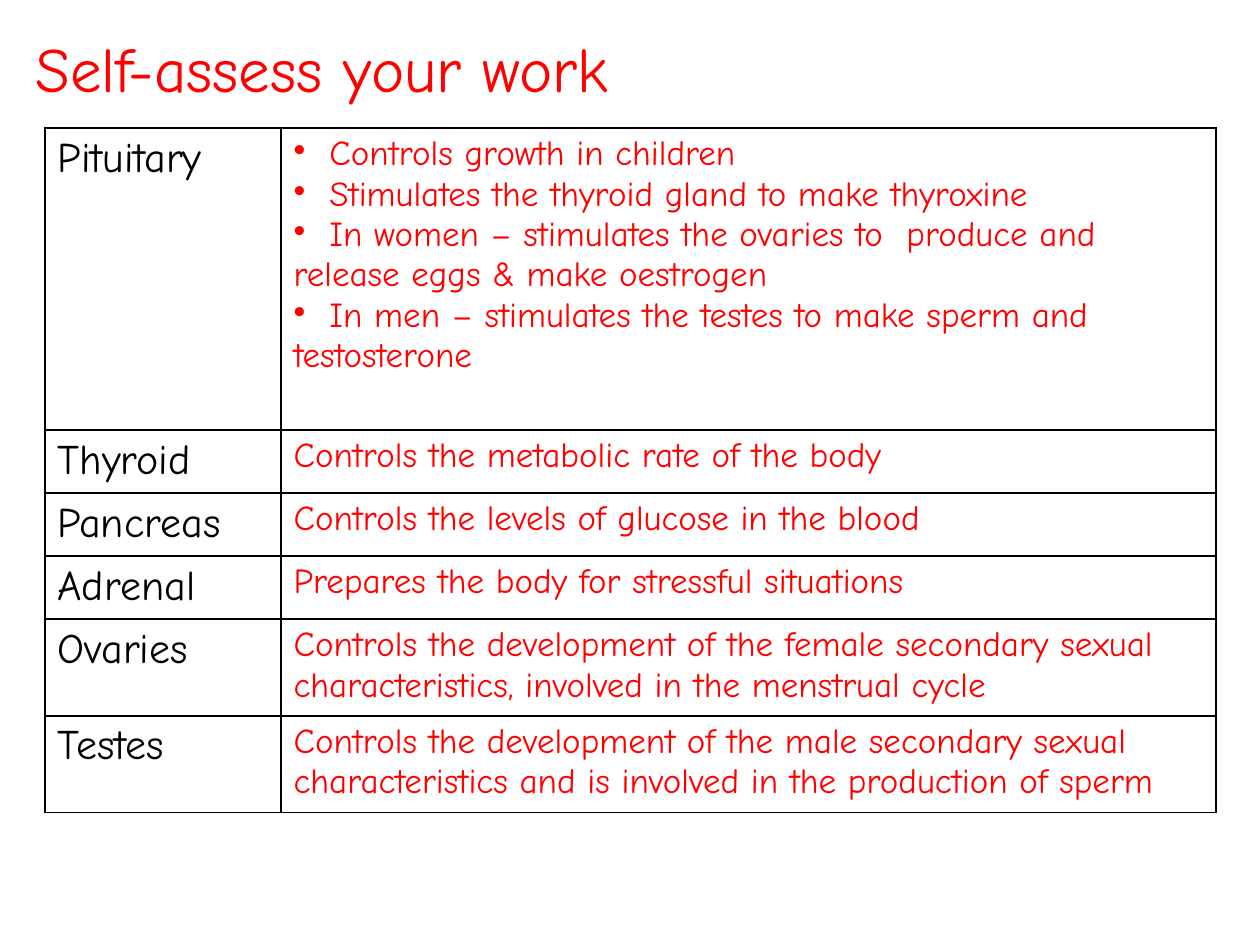
from typing import NamedTuple

from lxml import etree
from pptx import Presentation
from pptx.dml.color import RGBColor
from pptx.enum.text import MSO_ANCHOR
from pptx.oxml.ns import qn
from pptx.util import Emu, Pt

TOP = MSO_ANCHOR.TOP
PX = 914400 // 126
FONT = "Comic Neue"
COLORS = {"answer": "FF0000", "gland": "000000", "border": "000000", "paper": "FFFFFF"}


class GlandRow(NamedTuple):
    gland: str
    answers: list[str]
    height: int
    bulleted: bool = False


ROWS = [
    GlandRow("Pituitary", [
        "  Controls growth in children",
        "  Stimulates the thyroid gland to make thyroxine",
        "  In women – stimulates the ovaries to  produce and release eggs & make oestrogen",
        "  In men – stimulates the testes to make sperm and testosterone",
    ], 302, True),
    GlandRow("Thyroid", ["Controls the metabolic rate of the body"], 63),
    GlandRow("Pancreas", ["Controls the levels of glucose in the blood"], 62),
    GlandRow("Adrenal", ["Prepares the body for stressful situations"], 61),
    GlandRow("Ovaries", ["Controls the development of the female secondary sexual "
                         "characteristics, involved in the menstrual cycle"], 93),
    GlandRow("Testes", ["Controls the development of the male secondary sexual "
                        "characteristics and is involved in the production of sperm"], 93),
]
COLUMN_WIDTHS = [236, 935]


def px(length: int) -> Emu:
    return Emu(length * PX)


def write(frame, lines: list[str], *, size: int, color: str,
          bulleted: bool = False, line_spacing: float = 1.0) -> None:
    """Fill a text frame with one paragraph per line."""
    frame.word_wrap = True
    for index, line in enumerate(lines):
        para = frame.paragraphs[0] if index == 0 else frame.add_paragraph()
        para.line_spacing = line_spacing
        span = para.add_run()
        span.text = line
        span.font.name = FONT
        span.font.size = Pt(size)
        span.font.color.rgb = RGBColor.from_string(COLORS[color])
        if bulleted:
            properties = para._p.get_or_add_pPr()
            properties.set("marL", "0")
            properties.set("indent", "0")
            etree.SubElement(properties, qn("a:buChar"), char="•")


def style_cell(cell) -> None:
    """Give a cell a plain fill and a thin border on every side."""
    cell.vertical_anchor = TOP
    properties = cell._tc.get_or_add_tcPr()
    for side in ("lnL", "lnR", "lnT", "lnB"):
        line = etree.SubElement(properties, qn(f"a:{side}"), w=str(Pt(1)))
        fill = etree.SubElement(line, qn("a:solidFill"))
        etree.SubElement(fill, qn("a:srgbClr"), val=COLORS["border"])
    cell.fill.solid()
    cell.fill.fore_color.rgb = RGBColor.from_string(COLORS["paper"])


def add_gland_table(page, rows: list[GlandRow], left: int, top: int) -> None:
    height = sum(row.height for row in rows)
    table = page.shapes.add_table(len(rows), len(COLUMN_WIDTHS), px(left), px(top),
                                  px(sum(COLUMN_WIDTHS)), px(height)).table
    table.first_row = table.horz_banding = False
    for column, width in zip(table.columns, COLUMN_WIDTHS):
        column.width = px(width)
    for index, row in enumerate(rows):
        table.rows[index].height = px(row.height)
        gland_cell, answer_cell = table.rows[index].cells
        write(gland_cell.text_frame, [row.gland], size=24, color="gland")
        write(answer_cell.text_frame, row.answers, size=20, color="answer",
              bulleted=row.bulleted)
        style_cell(gland_cell)
        style_cell(answer_cell)


def main() -> None:
    deck = Presentation()
    deck.slide_width, deck.slide_height = px(1260), px(945)
    page = deck.slides.add_slide(deck.slide_layouts[6])

    # Title
    title = page.shapes.add_textbox(px(23), px(32), px(842), px(108))
    write(title.text_frame, ["Self-assess your work"], size=36, color="answer",
          line_spacing=0.9)

    # Glands and what they do
    add_gland_table(page, ROWS, left=45, top=128)

    deck.save("out.pptx")


if __name__ == "__main__":
    main()
